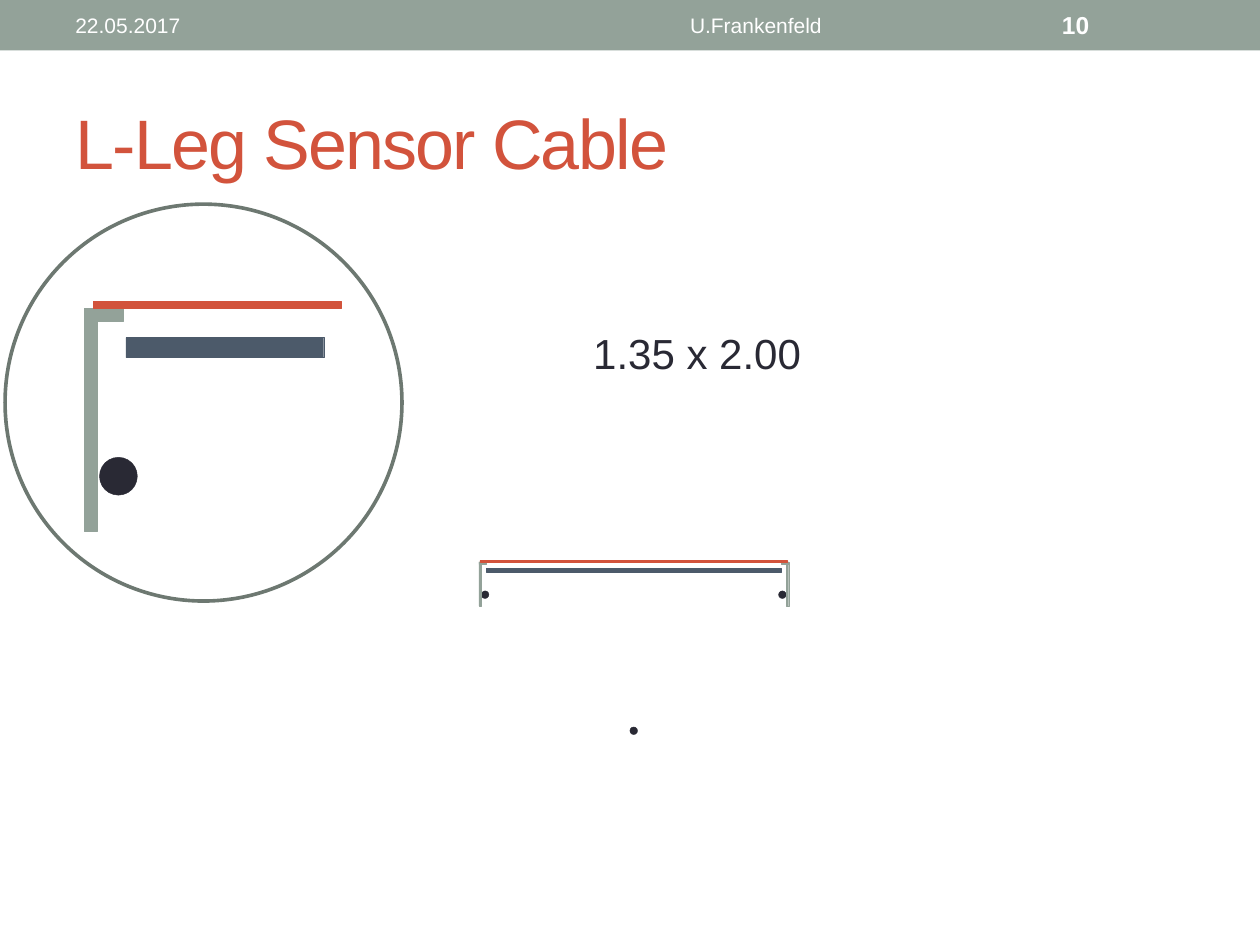
"""Build the L-Leg Sensor Cable slide."""
import pptx
import pptx.util
from pptx.dml.color import RGBColor
from pptx.enum.shapes import MSO_SHAPE
from pptx.enum.text import MSO_ANCHOR, MSO_AUTO_SIZE, PP_ALIGN

Inches, Pt = pptx.util.Inches, pptx.util.Pt

SAGE = RGBColor(0x93, 0xA2, 0x99)
RED = RGBColor(0xD2, 0x53, 0x3C)
DARK = RGBColor(0x29, 0x29, 0x34)
SLATE = RGBColor(0x4C, 0x5A, 0x6A)
RING = RGBColor(0x6D, 0x78, 0x71)
WHITE = RGBColor(0xFF, 0xFF, 0xFF)

RECT, OVAL = MSO_SHAPE.RECTANGLE, MSO_SHAPE.OVAL

HEADER_BAR = (0, 0, 10, 0.4)
TITLE = ("L-Leg Sensor Cable", (0.5, 0.58, 9, 1.08))
DIMENSIONS = ("1.35 x 2.00", (4.61, 2.55, 1.96, 0.5))
HEADER = [
    ("22.05.2017", 0.5, 3.17, 12, False, PP_ALIGN.LEFT),
    ("U.Frankenfeld", 3.75, 4.5, 12, False, PP_ALIGN.CENTER),
    ("10", 8.33, 1.17, 14, True, PP_ALIGN.LEFT),
]

CABLE = 0.06
CABLES = [(3.82, 4.69), (6.18, 4.69), (5, 5.77)]
LEG_TOP, LEG_HEIGHT, LEG_THICK, FOOT = 4.46, 0.35, 0.02, 0.06
LEGS = [(3.8, 3.8), (6.24, 6.2)]
COVER = (3.81, 4.45, 2.44, 0.01)
SENSOR = (3.86, 4.51, 2.34, 0.03)

DETAIL = [
    (OVAL, (0.79, 3.63, 0.3, 0.3), DARK),
    (RECT, (0.67, 2.45, 0.1, 1.77), SAGE),
    (RECT, (0.67, 2.45, 0.31, 0.1), SAGE),
    (RECT, (0.74, 2.39, 1.97, 0.06), RED),
    (RECT, (1, 2.68, 1.57, 0.16), SLATE),
]
DETAIL_RING = (0.04, 1.62, 3.15, 3.15)


def add_part(shapes, kind, box, fill, line=None, width=0.25):
    sp = shapes.add_shape(kind, *map(Inches, box))
    sp.shadow.inherit = False
    if fill is None:
        sp.fill.background()
    else:
        sp.fill.solid()
        sp.fill.fore_color.rgb = fill
    sp.line.color.rgb = line or fill
    sp.line.width = Pt(width)
    return sp


def add_text(shapes, text, box, size, color, bold=False, align=PP_ALIGN.LEFT):
    sp = shapes.add_textbox(*map(Inches, box))
    tf = sp.text_frame
    tf.word_wrap = True
    tf.vertical_anchor = MSO_ANCHOR.MIDDLE
    tf.text = text
    p = tf.paragraphs[0]
    p.alignment = align
    font = p.runs[0].font
    font.name, font.size, font.bold = "Arial", Pt(size), bold
    font.color.rgb = color
    return sp


def main():
    prs = pptx.Presentation()
    prs.slide_width, prs.slide_height = Inches(10), Inches(7.5)
    s = prs.slides.add_slide(prs.slide_layouts[6])
    shapes = s.shapes

    add_part(shapes, RECT, HEADER_BAR, SAGE).line.fill.background()
    title = add_text(shapes, *TITLE, 40, RED)
    title.text_frame.paragraphs[0].runs[0].font._element.set("spc", "-100")

    for left, top in CABLES:
        add_part(shapes, OVAL, (left, top, CABLE, CABLE), DARK)
    for leg_left, foot_left in LEGS:
        leg = shapes.add_group_shape().shapes
        add_part(leg, RECT, (leg_left, LEG_TOP, LEG_THICK, LEG_HEIGHT), SAGE)
        add_part(leg, RECT, (foot_left, LEG_TOP, FOOT, LEG_THICK), SAGE)
    add_part(shapes, RECT, COVER, RED)

    tf = add_text(shapes, *DIMENSIONS, 24, DARK).text_frame
    tf.word_wrap = False
    tf.auto_size = MSO_AUTO_SIZE.SHAPE_TO_FIT_TEXT
    tf.vertical_anchor = MSO_ANCHOR.TOP

    add_part(shapes, RECT, SENSOR, SLATE)
    detail = shapes.add_group_shape().shapes
    for kind, box, color in DETAIL:
        add_part(detail, kind, box, color)
    add_part(shapes, OVAL, DETAIL_RING, None, RING, 2.08)

    for text, left, width, size, bold, align in HEADER:
        add_text(shapes, text, (left, 0.02, width, 0.36), size, WHITE, bold, align)

    prs.save("out.pptx")


if __name__ == "__main__":
    main()
